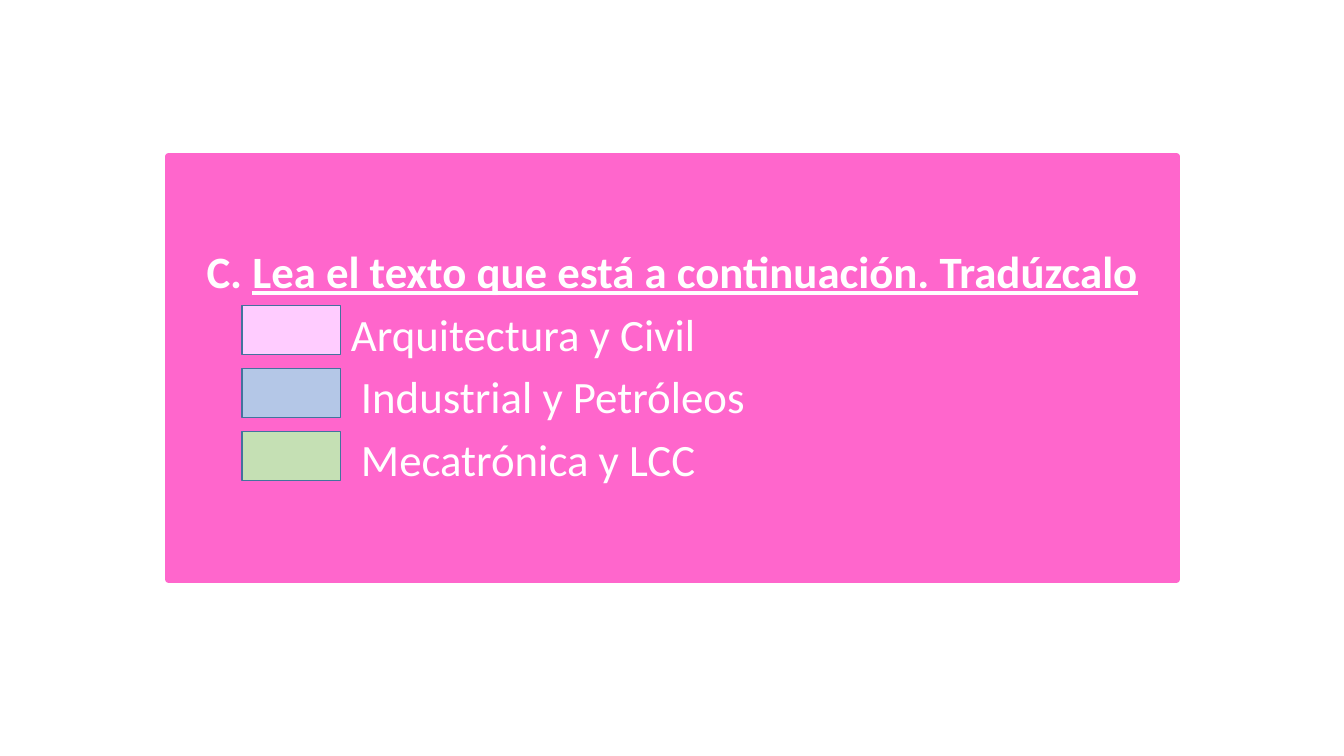
from pptx import Presentation
from pptx.dml.color import RGBColor
from pptx.enum.shapes import MSO_SHAPE
from pptx.enum.text import MSO_ANCHOR, MSO_AUTO_SIZE, PP_ALIGN
from pptx.util import Inches, Pt

RECT = MSO_SHAPE.RECTANGLE
MIDDLE = MSO_ANCHOR.MIDDLE
FIXED = MSO_AUTO_SIZE.NONE
LEFT, CENTER = PP_ALIGN.LEFT, PP_ALIGN.CENTER

COLORS = {
    "panel": "FF66CC",
    "text": "FFFFFF",
    "edge": "43739E",
    "pink": "FFCCFF",
    "blue": "B4C7E7",
    "green": "C5E0B4",
}
GROUPS = [
    ("Arquitectura y Civil", "pink", 1.71),
    ("Industrial y Petróleos", "blue", 1.81),
    ("Mecatrónica y LCC", "green", 1.81),
]


def paint(shape, fill, edge, width):
    """Fill and outline a shape with named colours."""
    shape.fill.solid()
    shape.fill.fore_color.rgb = RGBColor.from_string(COLORS[fill])
    shape.line.color.rgb = RGBColor.from_string(COLORS[edge])
    shape.line.width = Pt(width)


def add_run(para, text, bold=False, under=False):
    """Append one white run to a paragraph."""
    run = para.add_run()
    run.text = text
    font = run.font
    font.name, font.size = "Calibri", Pt(32)
    font.bold, font.underline = bold, under
    font.color.rgb = RGBColor.from_string(COLORS["text"])


def space(para, align, indent=0):
    """Set alignment, spacing and left indent of a paragraph."""
    para.alignment = align
    para.line_spacing = 0.9
    para.space_before = Pt(10)
    props = para._p.get_or_add_pPr()
    props.set("marL", str(Inches(indent)))
    props.set("indent", "0")


def add_panel(panel, left, top, width, height):
    """Place the panel with its heading and group names."""
    panel.left, panel.top = Inches(left), Inches(top)
    panel.width, panel.height = Inches(width), Inches(height)
    paint(panel, "panel", "panel", 4.5)
    frame = panel.text_frame
    frame.word_wrap = True
    frame.auto_size = FIXED
    frame.vertical_anchor = MIDDLE
    head = frame.paragraphs[0]
    space(head, CENTER)
    add_run(head, "C. ", bold=True)
    add_run(head, "Lea el texto que está a continuación. Tradúzcalo", bold=True, under=True)
    for name, _, indent in GROUPS:
        para = frame.add_paragraph()
        space(para, LEFT, indent)
        add_run(para, name)


def add_keys(slide, left, top, width, height, pitch):
    """Stack one colour key per group."""
    for row, (_, color, _) in enumerate(GROUPS):
        key = slide.shapes.add_shape(
            RECT, Inches(left), Inches(top + row * pitch), Inches(width), Inches(height)
        )
        key.shadow.inherit = False
        paint(key, color, "edge", 1)


def main():
    """Build and save the slide."""
    deck = Presentation()
    deck.slide_width, deck.slide_height = Inches(13.33), Inches(7.5)
    slide = deck.slides.add_slide(deck.slide_layouts[0])
    title = slide.shapes.title.element
    title.getparent().remove(title)
    add_panel(slide.placeholders[1], 1.67, 1.55, 10, 4.2)
    add_keys(slide, 2.4, 3.03, 0.98, 0.49, 0.625)
    deck.save("out.pptx")


if __name__ == "__main__":
    main()
